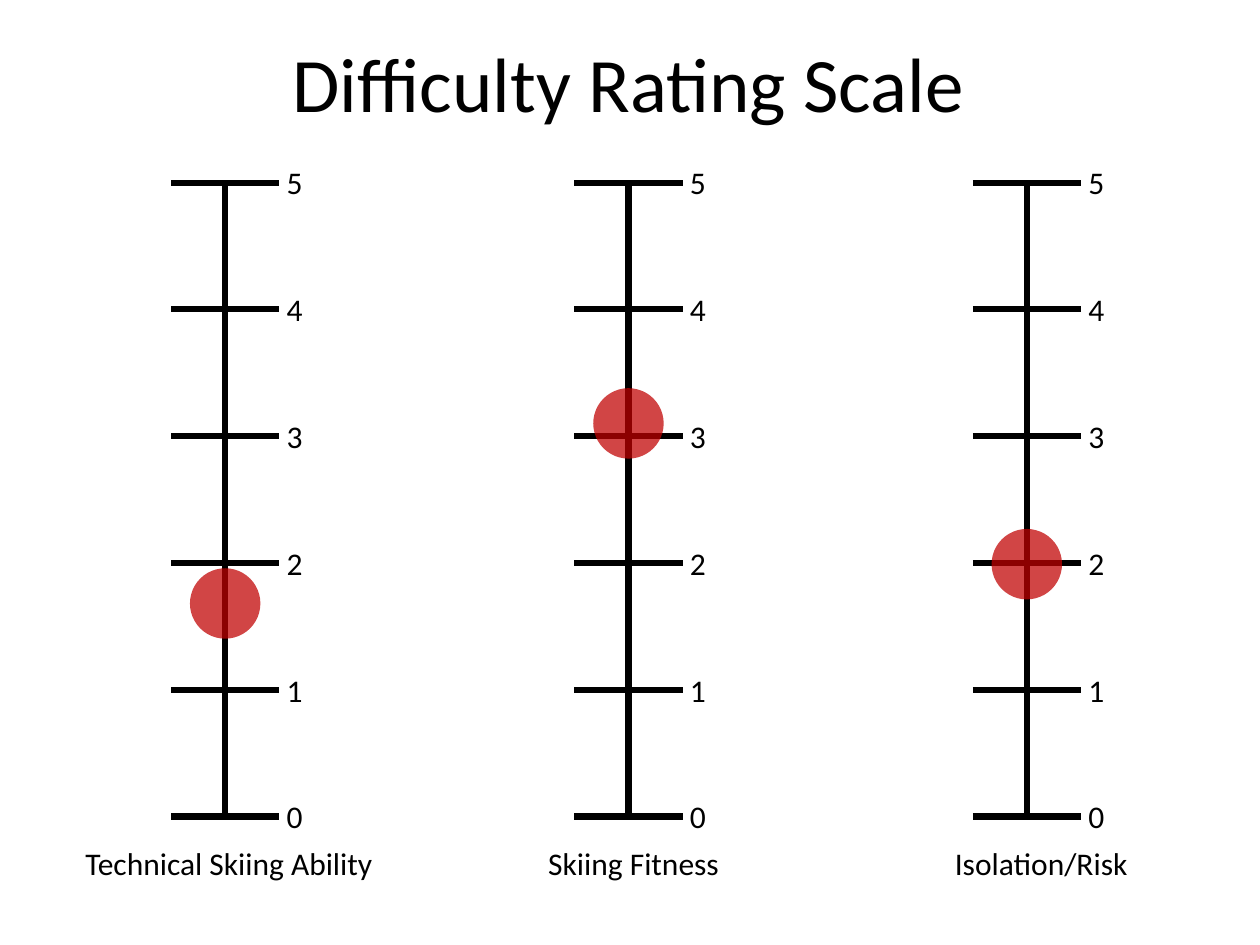
from pptx import Presentation
from pptx.dml.color import RGBColor
from pptx.enum.shapes import MSO_CONNECTOR, MSO_SHAPE
from pptx.enum.text import MSO_ANCHOR, MSO_AUTO_SIZE, PP_ALIGN
from pptx.oxml.ns import qn
from pptx.util import Cm, Pt
from lxml.etree import SubElement

BLACK = RGBColor(0, 0, 0)
RED = RGBColor(0xC0, 0, 0)
FONT = "Calibri"
TOP = 5
DOT = 1.42


def add_text(slide, text, left, top, width, height, size=18, align=PP_ALIGN.LEFT):
    """Place one line of text in a box given in centimetres."""
    box = slide.shapes.add_textbox(Cm(left), Cm(top), Cm(width), Cm(height))
    frame = box.text_frame
    frame.text = text
    frame.word_wrap = True
    para = frame.paragraphs[0]
    para.alignment = align
    font = para.runs[0].font
    font.name, font.size = FONT, Pt(size)
    font.color.rgb = BLACK
    return frame


def add_line(shapes, x1, y1, x2, y2):
    """Draw a thick black line between two points in centimetres."""
    line = shapes.add_connector(MSO_CONNECTOR.STRAIGHT, Cm(x1), Cm(y1), Cm(x2), Cm(y2))
    line.line.color.rgb = BLACK
    line.line.width = Pt(3.5)
    SubElement(line._element.spPr, qn("a:effectLst"))


def add_dot(slide, x, y):
    """Draw a translucent red dot centred on a point."""
    dot = slide.shapes.add_shape(
        MSO_SHAPE.OVAL, Cm(x - DOT / 2), Cm(y - DOT / 2), Cm(DOT), Cm(DOT))
    dot.shadow.inherit = False
    dot.fill.solid()
    dot.fill.fore_color.rgb = RED
    dot.line.fill.background()
    color = dot._element.spPr.find(qn("a:solidFill"))[0]
    SubElement(color, qn("a:alpha"), val="73000")


def add_title(slide, text, left, top, width, height):
    """Place the centred slide title in its box."""
    frame = add_text(slide, text, left, top, width, height, 44, PP_ALIGN.CENTER)
    frame.vertical_anchor = MSO_ANCHOR.MIDDLE


def add_scale(slide, rating, left, top, width, height):
    """Draw a scale from 0 to 5 with its rating dot in the given box."""
    mid = left + width / 2
    step = height / TOP
    group = slide.shapes.add_group_shape()
    add_line(group.shapes, mid, top, mid, top + height)
    for mark in range(TOP + 1):
        y = top + (TOP - mark) * step
        add_line(group.shapes, left, y, left + width, y)
        add_text(group_slide(group), str(mark), left + width - 0.1, y - 0.51, 0.84, 1.02)
    add_dot(slide, mid, top + (TOP - rating) * step)


def group_slide(group):
    """Return the group itself, which offers shapes as a slide does."""
    return group


def add_label(slide, text, left, top, width, height, align):
    """Place the caption below a scale."""
    frame = add_text(slide, text, left, top, width, height, align=align)
    frame.auto_size = MSO_AUTO_SIZE.SHAPE_TO_FIT_TEXT


def main():
    """Build the slide and save it."""
    deck = Presentation()
    deck.slide_width, deck.slide_height = Cm(25.4), Cm(19.05)
    slide = deck.slides.add_slide(deck.slide_layouts[6])
    scales = [
        ("Technical Skiing Ability", 1.68, 3.45, 1.47, 6.96, PP_ALIGN.LEFT),
        ("Skiing Fitness", 3.1, 11.58, 10.31, 4.93, PP_ALIGN.CENTER),
        ("Isolation/Risk", 1.99, 19.61, 19, 4.93, PP_ALIGN.LEFT),
    ]
    for name, rating, left, start, width, align in scales:
        add_label(slide, name, start, 16.89, width, 1.02, align)
        add_scale(slide, rating, left, 3.68, 2.18, 12.78)
    add_title(slide, "Difficulty Rating Scale", 1.24, 0.05, 22.86, 3.18)
    deck.save("out.pptx")


if __name__ == "__main__":
    main()
